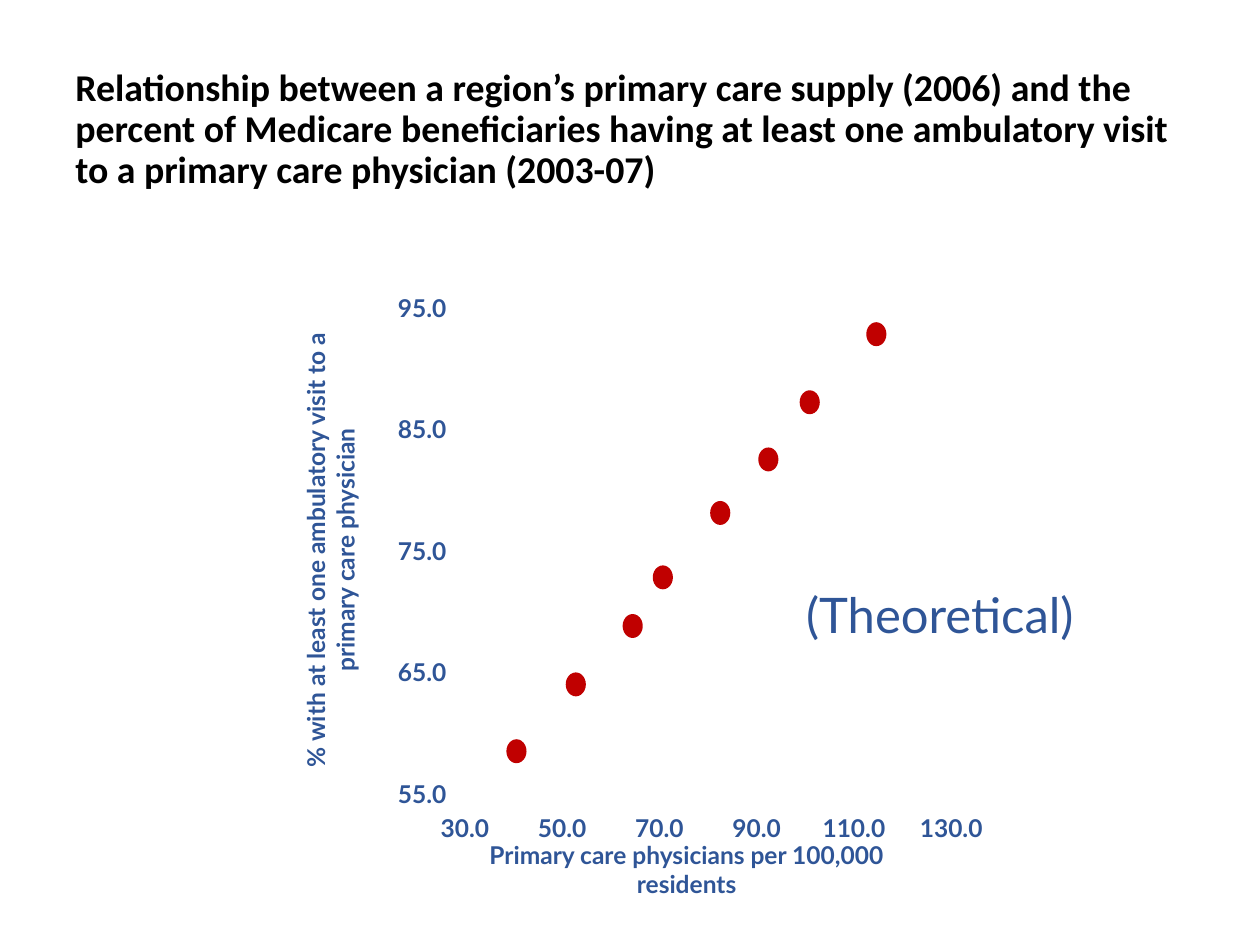
from pptx import Presentation
from pptx.dml.color import RGBColor
from pptx.enum.shapes import MSO_SHAPE
from pptx.enum.text import MSO_ANCHOR, PP_ALIGN
from pptx.util import Inches, Pt

deck = Presentation()
deck.slide_width, deck.slide_height = Inches(10), Inches(7.5)
slide = deck.slides.add_slide(deck.slide_layouts[6])
col, row = deck.slide_width / 100, deck.slide_height / 75

hues = {"title": "000000", "label": "2F5597", "dot": "C00000"}
head = {"name": "Calibri", "size": Pt(21.6), "bold": True}
label = {"name": "Lato", "size": Pt(14), "bold": True}
note = {"name": "Lato", "size": Pt(28), "bold": False}


def place(x, y, wide, high):
    return [round(v) for v in (x * col, y * row, wide * col, high * row)]


def write(lines, spot, style, hue="label", align=PP_ALIGN.CENTER, wrap=False, inset=0):
    box = slide.shapes.add_textbox(*place(*spot))
    frame = box.text_frame
    sides = {f"margin_{side}": Inches(inset) for side in ("left", "right")}
    sides |= {f"margin_{side}": Inches(inset / 2) for side in ("top", "bottom")}
    for key, value in {**sides, "word_wrap": wrap, "vertical_anchor": MSO_ANCHOR.MIDDLE}.items():
        setattr(frame, key, value)
    frame.text = "\n".join(lines)
    for para in frame.paragraphs:
        para.alignment = align
        font = para.runs[0].font
        for key, value in style.items():
            setattr(font, key, value)
        font.color.rgb = RGBColor.from_string(hues[hue])
    return box


title = write(
    ["Relationship between a region’s primary care supply (2006) and the percent of "
     "Medicare beneficiaries having at least one ambulatory visit to a primary care "
     "physician (2003-07)"],
    (5, 6.5, 90, 7.7), head, "title", PP_ALIGN.LEFT, True, 0.1)
title.text_frame.paragraphs[0].line_spacing = 0.9

left, base = 36.9, 63
xstep, ystep = 0.386, 0.965
xmin, ymin = 30, 55

for tick in range(ymin, 96, 10):
    write([f"{tick:.1f}"], (31.4, base - (tick - ymin) * ystep - 1.2, 4.2, 2.4), label)

for tick in range(xmin, 131, 20):
    wide = 4.2 if tick < 100 else 5.3
    mid = left + (tick - xmin) * xstep
    write([f"{tick:.1f}"], (mid - wide / 2, 64.5, wide, 2.4), label)

write(["Primary care physicians per 100,000 residents"], (34.7, 67.8, 39.6, 2.4), label)
side = write(["% with at least one ambulatory visit to a", "primary care physician"],
             (7.7, 41.3, 37, 4.7), label)
side.rotation = 270

points = [(40.6, 58.5), (52.8, 64), (64.5, 68.8), (70.7, 72.8),
          (82.5, 78.1), (92.4, 82.5), (100.9, 87.2), (114.6, 92.8)]
for supply, share in points:
    x = left + (supply - xmin) * xstep
    y = base - (share - ymin) * ystep
    dot = slide.shapes.add_shape(MSO_SHAPE.OVAL, *place(x - 0.8, y - 0.95, 1.6, 1.9))
    dot.shadow.inherit = False
    dot.fill.solid()
    dot.fill.fore_color.rgb = RGBColor.from_string(hues["dot"])
    dot.line.fill.background()

write(["(Theoretical)"], (63, 45.9, 23.2, 5.7), note, align=PP_ALIGN.LEFT, inset=0.1)

deck.save("out.pptx")
